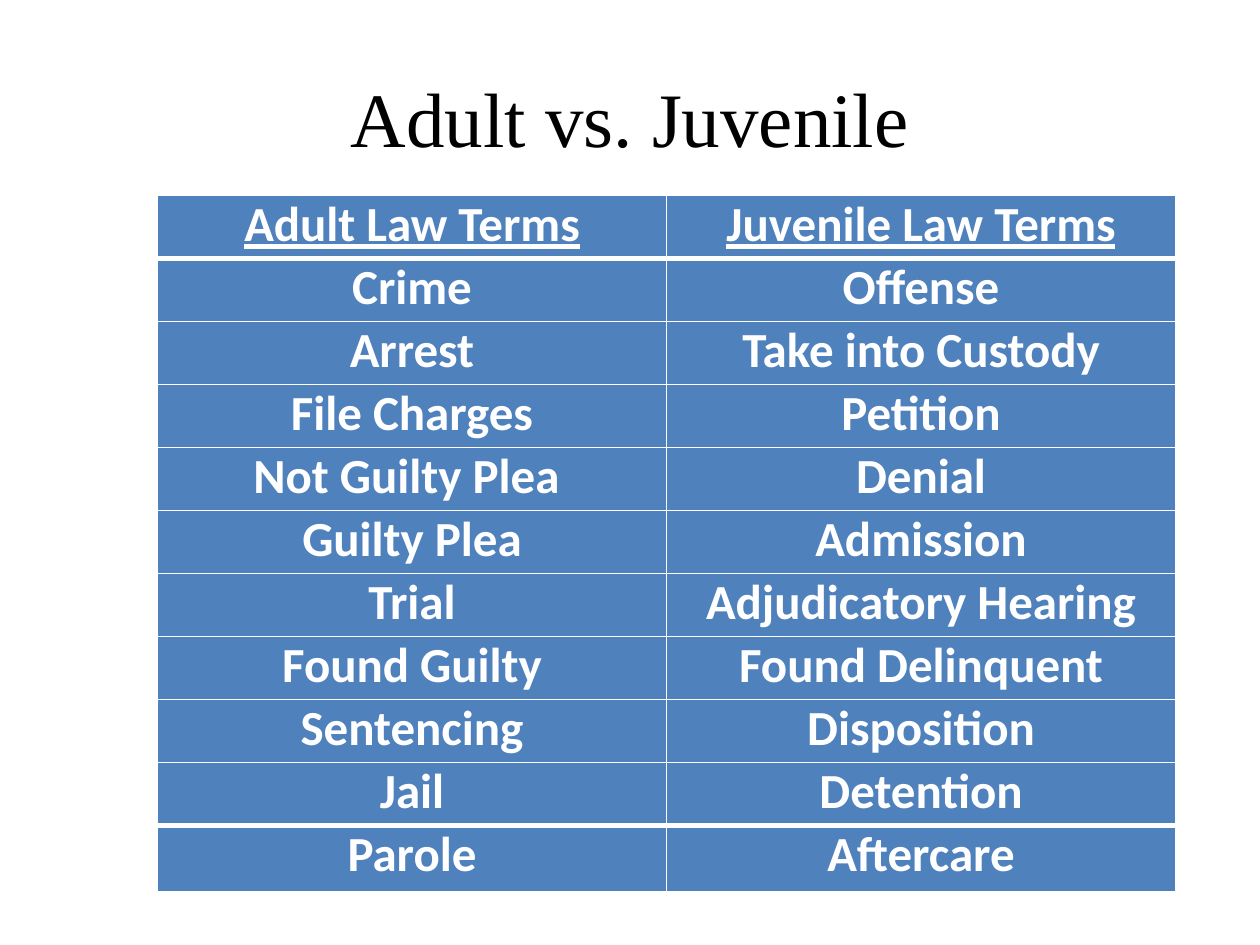
from dataclasses import dataclass

from lxml import etree
from pptx import Presentation
from pptx.dml.color import RGBColor
from pptx.enum.text import MSO_ANCHOR, PP_ALIGN
from pptx.oxml.ns import qn
from pptx.util import Inches, Pt

CENTER = PP_ALIGN.CENTER
MIDDLE = MSO_ANCHOR.MIDDLE
TOP = MSO_ANCHOR.TOP
BLANK_LAYOUT = 6

TERMS = [
    ("Adult Law Terms", "Juvenile Law Terms"),
    ("Crime", "Offense"),
    ("Arrest", "Take into Custody"),
    ("File Charges", "Petition"),
    ("Not Guilty Plea ", "Denial"),
    ("Guilty Plea", "Admission"),
    ("Trial", "Adjudicatory Hearing"),
    ("Found Guilty", "Found Delinquent"),
    ("Sentencing", "Disposition"),
    ("Jail", "Detention"),
    ("Parole", "Aftercare"),
]


@dataclass(frozen=True)
class Theme:
    title_font: str = "Times New Roman"
    title_size: int = 44
    title_color: str = "000000"
    table_font: str = "Calibri"
    table_size: int = 28
    table_color: str = "FFFFFF"
    cell_fill: str = "4F81BD"
    border_color: str = "FFFFFF"
    thin: int = 1
    thick: int = 3


class SlideBuilder:
    def __init__(self, slide, theme):
        self.slide = slide
        self.theme = theme

    def style(self, tf, font, size, color, bold=False, underline=False):
        for p in tf.paragraphs:
            p.alignment = CENTER
            for r in p.runs:
                r.font.name = font
                r.font.size = Pt(size)
                r.font.bold = bold
                r.font.underline = underline
                r.font.color.rgb = RGBColor.from_string(color)

    def title(self, text, left, top, width, height):
        t = self.theme
        sp = self.slide.shapes.add_textbox(
            Inches(left), Inches(top), Inches(width), Inches(height))
        tf = sp.text_frame
        tf.word_wrap = True
        tf.vertical_anchor = MIDDLE
        tf.text = text
        self.style(tf, t.title_font, t.title_size, t.title_color)

    def borders(self, cell, top, bottom):
        t = self.theme
        tc_pr = cell._tc.get_or_add_tcPr()
        widths = {"a:lnL": t.thin, "a:lnR": t.thin, "a:lnT": top, "a:lnB": bottom}
        for tag, width in widths.items():
            ln = etree.SubElement(tc_pr, qn(tag), w=str(Pt(width)))
            fill = etree.SubElement(ln, qn("a:solidFill"))
            etree.SubElement(fill, qn("a:srgbClr"), val=t.border_color)

    def cell(self, cell, text, top, bottom, header):
        t = self.theme
        # Borders come before the fill in the cell properties
        self.borders(cell, top, bottom)
        cell.fill.solid()
        cell.fill.fore_color.rgb = RGBColor.from_string(t.cell_fill)
        cell.margin_left = cell.margin_right = Inches(0.07)
        cell.margin_top = cell.margin_bottom = 0
        cell.vertical_anchor = TOP
        cell.text_frame.text = text
        self.style(cell.text_frame, t.table_font, t.table_size, t.table_color,
                   bold=True, underline=header)

    def table(self, rows, left, top, col_width, row_height, last_height):
        t = self.theme
        n_rows, n_cols = len(rows), len(rows[0])
        height = row_height * (n_rows - 1) + last_height
        table = self.slide.shapes.add_table(
            n_rows, n_cols, Inches(left), Inches(top),
            Inches(col_width * n_cols), Inches(height)).table
        for col in table.columns:
            col.width = Inches(col_width)
        for row in table.rows:
            row.height = Inches(row_height)
        table.rows[n_rows - 1].height = Inches(last_height)

        # Thick rules lie under the header and above the last row
        rules = [t.thin] * (n_rows + 1)
        rules[1] = rules[n_rows - 1] = t.thick
        for i, row in enumerate(rows):
            for j, text in enumerate(row):
                self.cell(table.cell(i, j), text, rules[i], rules[i + 1], i == 0)


def main():
    prs = Presentation()
    prs.slide_width = Inches(10)
    prs.slide_height = Inches(7.5)
    s = prs.slides.add_slide(prs.slide_layouts[BLANK_LAYOUT])
    builder = SlideBuilder(s, Theme())

    # Heading
    builder.title("Adult vs. Juvenile", 0.5, 0.3, 9, 1.25)

    # Comparison of terms
    builder.table(TERMS, left=1.25, top=1.55, col_width=4.04,
                  row_height=0.5, last_height=0.53)

    prs.save("out.pptx")


if __name__ == "__main__":
    main()
